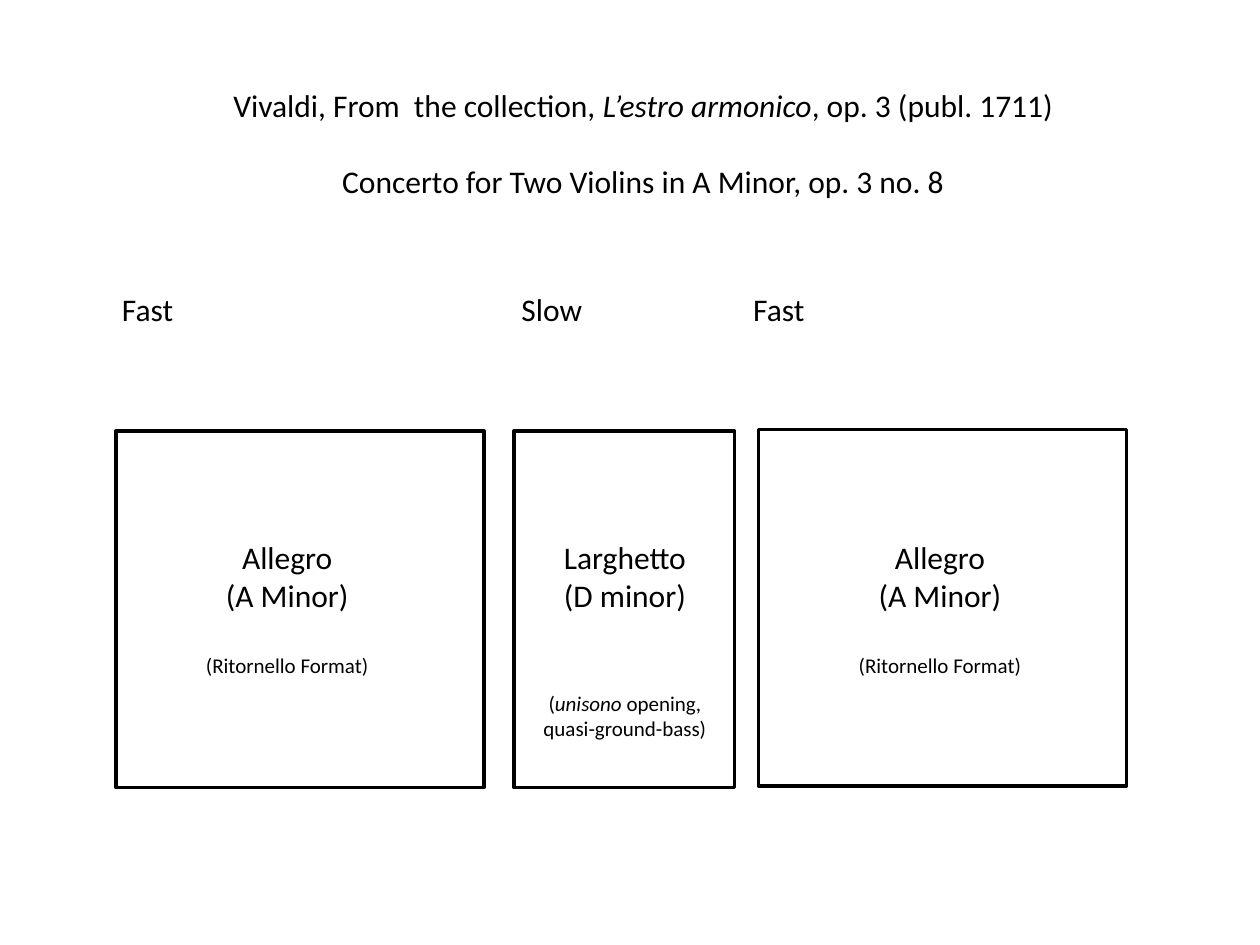
from dataclasses import dataclass

import pptx
import pptx.dml.color
import pptx.enum.shapes
import pptx.enum.text
import pptx.util

Inches = pptx.util.Inches
Pt = pptx.util.Pt
Align = pptx.enum.text.PP_ALIGN

HEX = {"ink": "000000", "page": "FFFFFF"}
FONT = "Calibri"
BIG, SMALL = 18, 12
LINE = 22  # height in points of one line of BIG text


@dataclass
class Run:
    text: str
    italic: bool = False


@dataclass
class Para:
    runs: list[Run]
    size: int = BIG
    gap: int = 0


@dataclass
class Box:
    left: float
    top: float
    width: float
    height: float

    def place(self) -> tuple:
        return tuple(Inches(n) for n in (self.left, self.top, self.width, self.height))


@dataclass
class Movement:
    tempo: str
    label: Box
    frame: Box
    text: Box
    paras: list[Para]


def color(name: str) -> pptx.dml.color.RGBColor:
    return pptx.dml.color.RGBColor.from_string(HEX[name])


def write(shape, paras: list[Para], align=Align.CENTER) -> None:
    frame = shape.text_frame
    frame.word_wrap = True
    frame.auto_size = pptx.enum.text.MSO_AUTO_SIZE.NONE
    frame.vertical_anchor = pptx.enum.text.MSO_ANCHOR.TOP
    for i, para in enumerate(paras):
        line = frame.paragraphs[0] if i == 0 else frame.add_paragraph()
        line.alignment = align
        line.space_before = Pt(para.gap)
        for part in para.runs:
            run = line.add_run()
            run.text = part.text
            run.font.name = FONT
            run.font.size = Pt(para.size)
            run.font.italic = part.italic
            run.font.color.rgb = color("ink")


def draw_frame(slide, box: Box) -> None:
    rect = slide.shapes.add_shape(pptx.enum.shapes.MSO_SHAPE.RECTANGLE, *box.place())
    rect.shadow.inherit = False
    rect.fill.background()
    rect.line.color.rgb = color("ink")
    rect.line.width = Pt(2)


def draw_movement(slide, move: Movement) -> None:
    draw_frame(slide, move.frame)
    write(slide.shapes.add_textbox(*move.text.place()), move.paras)
    label = slide.shapes.add_textbox(*move.label.place())
    write(label, [Para([Run(move.tempo)])], Align.LEFT)


def label_at(left: float) -> Box:
    return Box(left, 2.25, 1, 0.4)


HEADING = [
    Para([
        Run("Vivaldi, From  the collection, "),
        Run("L’estro armonico", True),
        Run(", op. 3 (publ. 1711)"),
    ]),
    Para([Run("Concerto for Two Violins in A Minor, op. 3 no. 8")], gap=LINE),
]
ALLEGRO = [
    Para([Run("Allegro")]),
    Para([Run("(A Minor)")]),
    Para([Run("(Ritornello Format)")], SMALL, LINE),
]
LARGHETTO = [
    Para([Run("Larghetto")]),
    Para([Run("(D minor)")]),
    Para(
        [Run("("), Run("unisono", True), Run(" opening, quasi-ground-bass)")],
        SMALL,
        2 * LINE,
    ),
]
MOVES = [
    Movement("Fast", label_at(0.87), Box(0.92, 3.42, 2.92, 2.83),
             Box(1.25, 4.22, 2.06, 1.21), ALLEGRO),
    Movement("Slow", label_at(4.04), Box(4.08, 3.42, 1.75, 2.83),
             Box(4.19, 4.22, 1.54, 1.72), LARGHETTO),
    Movement("Fast", label_at(5.88), Box(6.02, 3.41, 2.92, 2.83),
             Box(6.25, 4.22, 2.42, 1.21), ALLEGRO),
]


def main() -> None:
    deck = pptx.Presentation()
    deck.slide_width, deck.slide_height = Inches(10), Inches(7.5)
    slide = deck.slides.add_slide(deck.slide_layouts.get_by_name("Title Only"))
    slide.background.fill.solid()
    slide.background.fill.fore_color.rgb = color("page")

    title = slide.shapes.title
    title.left, title.top, title.width, title.height = Box(1.53, 0.63, 7.15, 1.01).place()
    write(title, HEADING)
    for move in MOVES:
        draw_movement(slide, move)
    deck.save("out.pptx")


if __name__ == "__main__":
    main()
